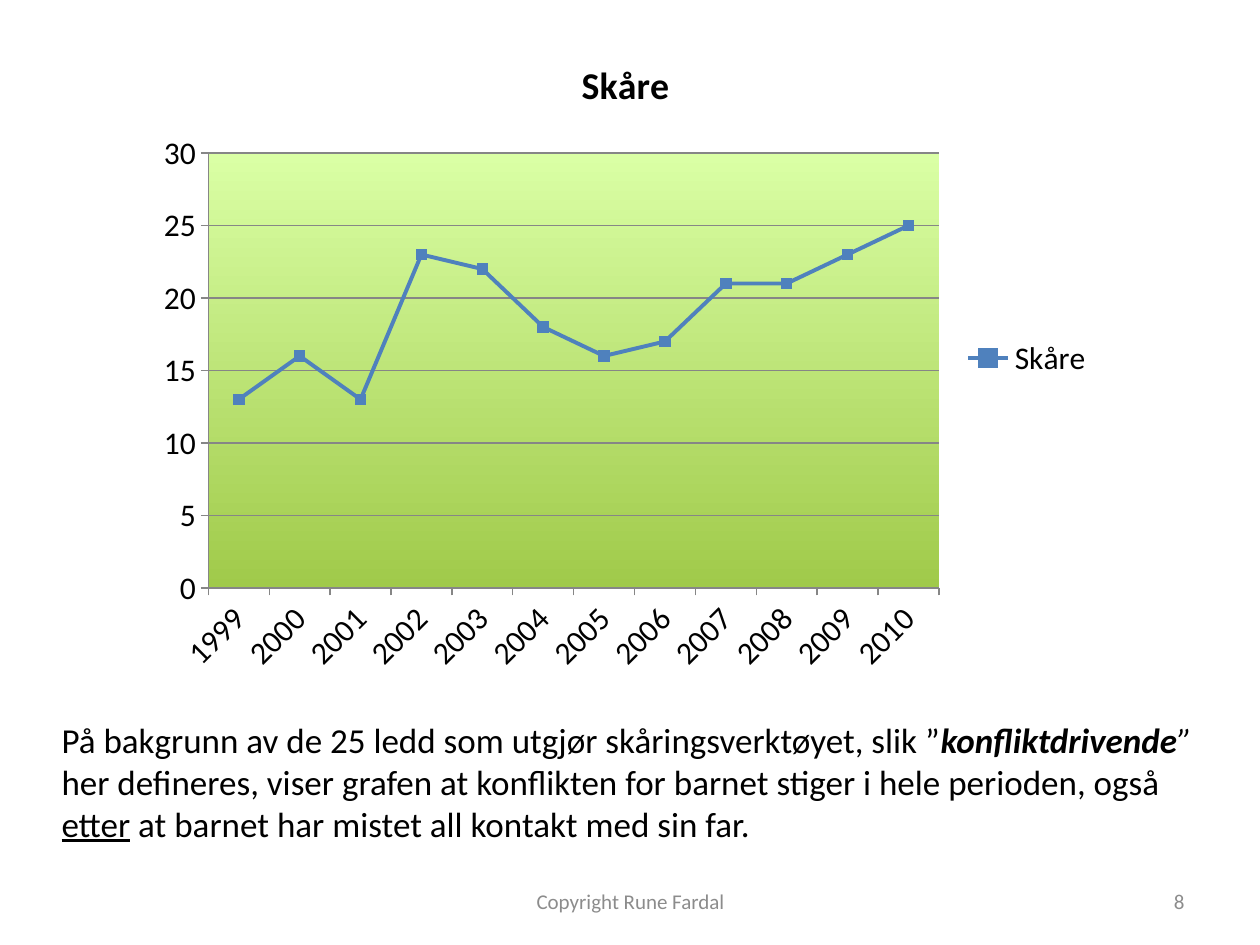
from lxml import etree
from pptx import Presentation
from pptx import util as u
from pptx.chart.data import CategoryChartData
from pptx.dml.color import RGBColor
from pptx.enum import chart as kinds
from pptx.enum import text
from pptx.oxml import parse_xml
from pptx.oxml.ns import nsdecls, qn

FONT = "Calibri"
SCORES = [13, 16, 13, 23, 22, 18, 16, 17, 21, 21, 23, 25]
PLOT_BOX = {"x": 0.066, "y": 0.186, "w": 0.76, "h": 0.665}
BODY = [
    [("På bakgrunn av de 25 ledd som utgjør skåringsverktøyet, slik ”", {}),
     ("konfliktdrivende", {"bold": True, "italic": True}),
     ("”", {"italic": True})],
    [("her defineres, viser grafen at konflikten for barnet stiger i hele perioden, også", {})],
    [("etter", {"underline": True}),
     (" at barnet har mistet all kontakt med sin far.", {})],
]


def rgb(value):
    """Turn a hex string into a colour."""
    return RGBColor.from_string(value)


def style_font(font, size, color="000000", **flags):
    """Set the face, size, colour and any flags of a font."""
    font.name, font.size = FONT, u.Pt(size)
    font.color.rgb = rgb(color)
    for name, value in flags.items():
        setattr(font, name, value)


def style_line(line, color, width):
    """Set the colour and width of a line."""
    line.color.rgb, line.width = rgb(color), u.Pt(width)


def style_plot_area(chart):
    """Place the plot area and give it a green gradient."""
    area = chart.plots[0]._element.getparent()
    for old in area.findall(qn("c:layout")):
        area.remove(old)
    layout = parse_xml(f"<c:layout {nsdecls('c')}><c:manualLayout/></c:layout>")
    entries = [("layoutTarget", "inner"), ("xMode", "edge"), ("yMode", "edge")]
    for tag, value in entries + list(PLOT_BOX.items()):
        etree.SubElement(layout[0], qn(f"c:{tag}")).set("val", str(value))
    area.insert(0, layout)
    area.append(parse_xml(
        f'<c:spPr {nsdecls("c", "a")}><a:gradFill><a:gsLst>'
        '<a:gs pos="0"><a:srgbClr val="A0CA4A"/></a:gs>'
        '<a:gs pos="100000"><a:srgbClr val="DAFFA5"/></a:gs>'
        '</a:gsLst><a:lin ang="16200000" scaled="0"/></a:gradFill></c:spPr>'))


def add_score_chart(page, box):
    """Add the line chart of yearly scores."""
    data = CategoryChartData()
    data.categories = [str(year) for year in range(1999, 2011)]
    data.add_series("Skåre", SCORES)
    chart = page.shapes.add_chart(
        kinds.XL_CHART_TYPE.LINE_MARKERS, *map(u.Inches, box), data).chart
    style_font(chart.font, 18)

    chart.has_title = True
    span = chart.chart_title.text_frame.paragraphs[0].add_run()
    span.text = "Skåre"
    style_font(span.font, 21.6, bold=True)
    chart.has_legend = True
    chart.legend.position = kinds.XL_LEGEND_POSITION.RIGHT
    chart.legend.include_in_layout = False

    for axis in (chart.category_axis, chart.value_axis):
        axis.major_tick_mark = kinds.XL_TICK_MARK.OUTSIDE
        axis.minor_tick_mark = kinds.XL_TICK_MARK.NONE
        style_line(axis.format.line, "868686", 0.75)
        style_font(axis.tick_labels.font, 18)
    chart.category_axis._element.find(qn("c:txPr")).find(qn("a:bodyPr")).set("rot", "-2700000")
    values = chart.value_axis
    values.minimum_scale, values.maximum_scale, values.major_unit = 0, 30, 5
    values.has_major_gridlines = True
    style_line(values.major_gridlines.format.line, "868686", 0.75)

    chart.plots[0].vary_by_categories = False
    series = chart.plots[0].series[0]
    series.smooth = False
    style_line(series.format.line, "4F81BD", 2.25)
    series.marker.style, series.marker.size = kinds.XL_MARKER_STYLE.SQUARE, 6
    series.marker.format.fill.solid()
    series.marker.format.fill.fore_color.rgb = rgb("4F81BD")
    style_line(series.marker.format.line, "4F81BD", 0.75)
    style_plot_area(chart)


def add_text(page, box, paragraphs, size, color="000000",
             align=text.PP_ALIGN.LEFT, anchor=text.MSO_ANCHOR.TOP, wrap=True):
    """Add a text box from paragraphs of (words, flags) runs."""
    frame = page.shapes.add_textbox(*map(u.Inches, box)).text_frame
    frame.word_wrap, frame.vertical_anchor = wrap, anchor
    for index, runs in enumerate(paragraphs):
        para = frame.add_paragraph() if index else frame.paragraphs[0]
        para.alignment = align
        for words, flags in runs:
            span = para.add_run()
            span.text = words
            style_font(span.font, size, color, **flags)


def add_footer(page, top, height):
    """Add the copyright line and the page number."""
    for left, width, words, align in (
            (3.42, 3.17, "Copyright Rune Fardal", text.PP_ALIGN.CENTER),
            (7.17, 2.33, "8", text.PP_ALIGN.RIGHT)):
        add_text(page, (left, top, width, height), [[(words, {})]], 12,
                 "8C8C8C", align, text.MSO_ANCHOR.MIDDLE)


def main():
    """Build and save the deck."""
    deck = Presentation()
    deck.slide_width, deck.slide_height = u.Inches(10), u.Inches(7.5)
    page = deck.slides.add_slide(deck.slide_layouts[6])
    add_score_chart(page, (1.15, 0.25, 7.63, 5.19))
    add_text(page, (0.39, 5.65, 9.23, 1.11), BODY, 20, wrap=False)
    add_footer(page, 6.95, 0.4)
    deck.save("out.pptx")


if __name__ == "__main__":
    main()
